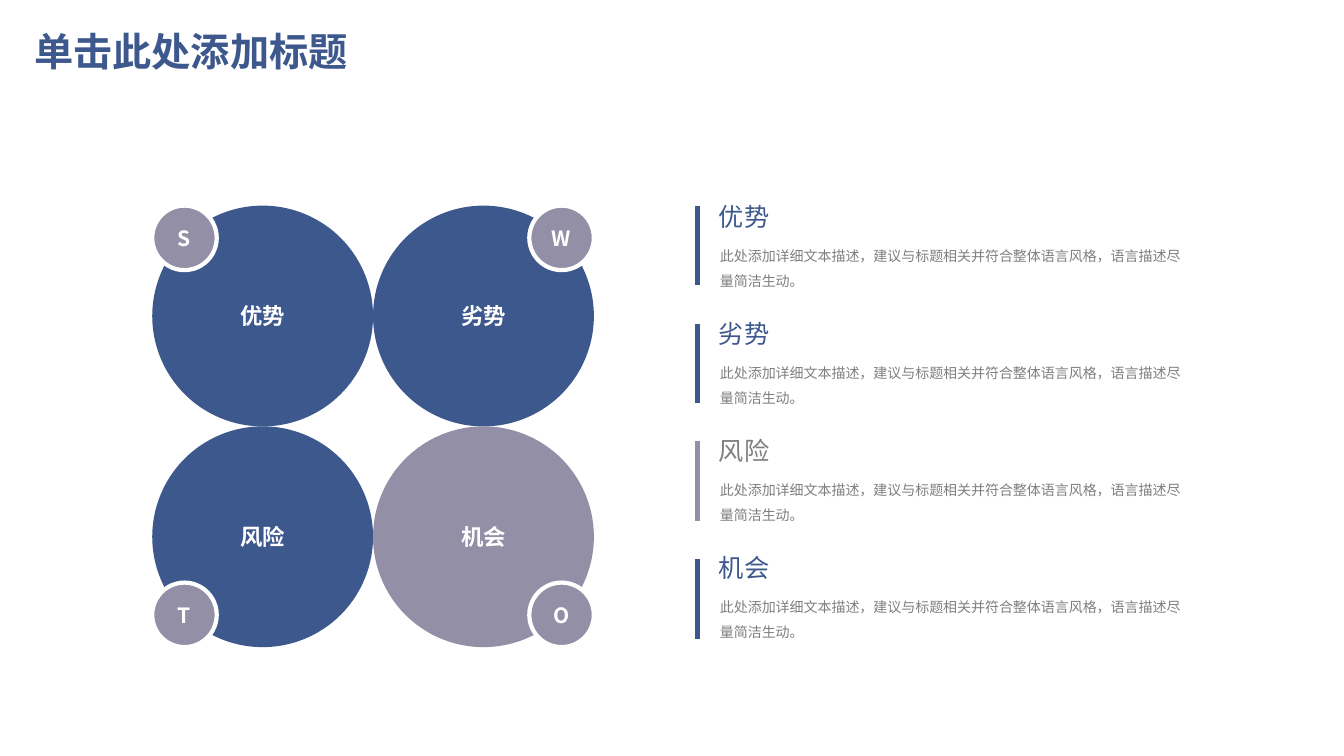
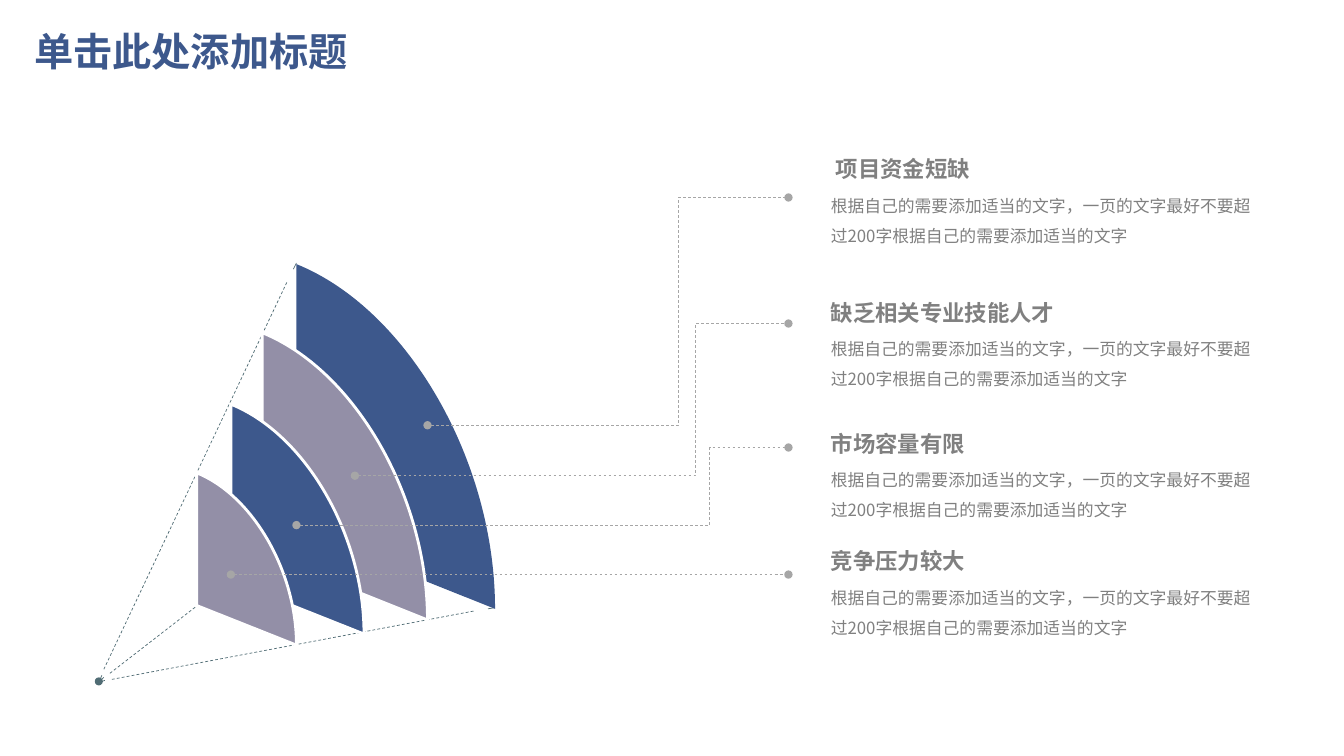
import lxml.etree
import pptx
import pptx.dml.color
import pptx.enum.dml
import pptx.enum.shapes
import pptx.enum.text
import pptx.oxml.ns
import pptx.util

Inches = pptx.util.Inches
Pt = pptx.util.Pt
SHAPES = pptx.enum.shapes.MSO_SHAPE
CONNECTORS = pptx.enum.shapes.MSO_CONNECTOR
ANCHOR = pptx.enum.text.MSO_ANCHOR
ALIGN = pptx.enum.text.PP_ALIGN
qn = pptx.oxml.ns.qn

BLUE, LAVENDER, WHITE = "3D588C", "938FA7", "FFFFFF"
TEXT_GREY, NOTE_GREY, LEADER_GREY, RAY_SLATE = "7F7F7F", "808080", "A6A6A6", "506C74"
TITLE = "单击此处添加标题"
CJK_FONT = "Noto Sans CJK SC"
SLIDE_WIDTH, SLIDE_HEIGHT, PANEL_TOP = 13.33, 7.5, 0.84

# Text styles: font attributes, line spacing
TITLE_STYLE = ({"name": "Montserrat", "size": Pt(28), "bold": True}, 0.9)
CIRCLE_STYLE = ({"name": CJK_FONT, "size": Pt(16), "bold": True}, 1.0)
BADGE_STYLE = ({"name": CJK_FONT, "size": Pt(15), "bold": True}, 1.0)
SWOT_HEADING = ({"name": CJK_FONT, "size": Pt(18)}, 0.9)
SWOT_BODY = ({"name": CJK_FONT, "size": Pt(10)}, 1.5)
RISK_HEADING = ({"name": CJK_FONT, "size": Pt(16), "bold": True}, 1.2)
RISK_BODY = ({"name": CJK_FONT, "size": Pt(12)}, 1.5)

# Name, badge letter, circle colour, bar colour, heading colour
SWOT = [
    ("优势", "S", BLUE, BLUE, BLUE),
    ("劣势", "W", BLUE, BLUE, BLUE),
    ("风险", "T", BLUE, LAVENDER, TEXT_GREY),
    ("机会", "O", LAVENDER, BLUE, BLUE),
]
SWOT_TEXT = "此处添加详细文本描述，建议与标题相关并符合整体语言风格，语言描述尽量简洁生动。"
CIRCLE_SIZE, BADGE_SIZE = 2.19, 0.64
GRID_LEFT, GRID_TOP = 1.51, 2.04

# Heading, indent, heading top, leader start, bend x, leader end y
RISKS = [
    ("项目资金短缺", 0.05, 1.42, (4.24, 4.22), 6.73, 1.96),
    ("缺乏相关专业技能人才", 0, 2.84, (3.52, 4.72), 6.9, 3.21),
    ("市场容量有限", 0, 4.14, (2.94, 5.21), 7.04, 4.44),
    ("竞争压力较大", 0, 5.31, (2.29, 5.7), None, 5.7),
]
RISK_TEXT = "根据自己的需要添加适当的文字，一页的文字最好不要超过200字根据自己的需要添加适当的文字"
LEADER_RIGHT = 7.82

# Left, top, width, height, colour, outline width
WEDGES = [
    (2.94, 2.62, 1.97, 3.42, BLUE, 0),
    (2.6, 3.3, 1.64, 2.85, LAVENDER, 2),
    (2.29, 4.01, 1.32, 2.28, BLUE, 2),
    (1.95, 4.69, 0.99, 1.71, LAVENDER, 2),
]
# Corner, top, two curve handles and tip, in fractions of the wedge's box
WEDGE_POINTS = [(0, 0.77), (0, 0), (0.56, 0.13), (1, 0.57), (1, 1)]

APEX = (0.98, 6.77)
# Points taken in pairs: stub, dashed stretch, tip
RAYS = [
    [APEX, (1.04, 6.75), (1.11, 6.74), (4.71, 6.06), (4.84, 6.04), (4.9, 6.03)],
    [APEX, (1.01, 6.7), (1.03, 6.64), (2.85, 2.79), (2.91, 2.67), (2.94, 2.61)],
    [APEX, (1.03, 6.72), (1.09, 6.68), (1.98, 5.99), (2.88, 5.29), (2.93, 5.25)],
]


def rgb(value):
    return pptx.dml.color.RGBColor.from_string(value)


def write(frame, text, style, color, align=ALIGN.LEFT, anchor=ANCHOR.TOP,
          insets=(0, 0, 0, 0)):
    """Put one formatted paragraph into a text frame."""
    left, top, right, bottom = (Inches(inset) for inset in insets)
    frame_format = {
        "word_wrap": True, "auto_size": pptx.enum.text.MSO_AUTO_SIZE.NONE,
        "vertical_anchor": anchor, "margin_left": left, "margin_top": top,
        "margin_right": right, "margin_bottom": bottom,
    }
    for name, value in frame_format.items():
        setattr(frame, name, value)
    font_format, spacing = style
    paragraph = frame.paragraphs[0]
    paragraph.alignment = align
    paragraph.line_spacing = spacing
    paragraph.space_before = Pt(0)
    run = paragraph.add_run()
    run.text = text
    for name, value in font_format.items():
        setattr(run.font, name, value)
    run.font.color.rgb = rgb(color)
    east_asian = lxml.etree.SubElement(run.font._element, qn("a:ea"))
    east_asian.set("typeface", CJK_FONT)


def add_text(slide, box, text, style, color, insets=(0, 0, 0, 0)):
    textbox = slide.shapes.add_textbox(*map(Inches, box))
    write(textbox.text_frame, text, style, color, insets=insets)


def paint(shape, fill, outline=0):
    """Give a shape a flat fill and an optional white outline."""
    shape.shadow.inherit = False
    shape.fill.solid()
    shape.fill.fore_color.rgb = rgb(fill)
    if outline:
        shape.line.color.rgb = rgb(WHITE)
        shape.line.width = Pt(outline)
    else:
        shape.line.fill.background()


def add_circle(slide, left, top, size, fill, outline=0):
    circle = slide.shapes.add_shape(
        SHAPES.OVAL, *map(Inches, (left, top, size, size)))
    paint(circle, fill, outline)
    return circle


def add_line(slide, start, end, color, width, dashed=False, bend=None, dots=False):
    """Draw a straight line, or an elbow that turns at x = bend."""
    kind = CONNECTORS.STRAIGHT if bend is None else CONNECTORS.ELBOW
    connector = slide.shapes.add_connector(kind, *map(Inches, (*start, *end)))
    connector.line.color.rgb = rgb(color)
    connector.line.width = Pt(width)
    if dashed:
        connector.line.dash_style = pptx.enum.dml.MSO_LINE.DASH
    properties = connector._element.spPr
    if dots:
        for name in ("a:headEnd", "a:tailEnd"):
            lxml.etree.SubElement(properties.find(qn("a:ln")), qn(name), type="oval")
    if bend is not None:
        ratio = round((bend - start[0]) / (end[0] - start[0]) * 100000)
        guides = properties.find(qn("a:prstGeom")).find(qn("a:avLst"))
        lxml.etree.SubElement(guides, qn("a:gd"), name="adj1", fmla=f"val {ratio}")
    lxml.etree.SubElement(properties, qn("a:effectLst"))


def add_wedge(slide, left, top, width, height, fill, outline):
    """Draw a wedge whose last three points form one Bezier curve."""
    corner, *others = [(Inches(left + x * width), Inches(top + y * height))
                       for x, y in WEDGE_POINTS]
    builder = slide.shapes.build_freeform(*corner)
    builder.add_line_segments(others, close=True)
    wedge = builder.convert_to_shape()
    segments = list(wedge._element.iter(qn("a:lnTo")))[1:4]
    curve = lxml.etree.Element(qn("a:cubicBezTo"))
    segments[0].addprevious(curve)
    for segment in segments:
        curve.append(segment[0])
        segment.getparent().remove(segment)
    paint(wedge, fill, outline)


def add_master_panel(presentation, slide):
    """Put the translucent white panel behind every slide."""
    box = (0, PANEL_TOP, SLIDE_WIDTH, SLIDE_HEIGHT - PANEL_TOP)
    panel = slide.shapes.add_shape(SHAPES.RECTANGLE, *map(Inches, box))
    paint(panel, WHITE)
    color = panel._element.spPr.find(qn("a:solidFill"))[0]
    lxml.etree.SubElement(color, qn("a:alpha"), val="72000")
    presentation.slide_master.shapes._spTree.insert(2, panel._element)


def add_slide(presentation):
    """Add a slide with the shared title."""
    slide = presentation.slides.add_slide(presentation.slide_layouts[5])
    title = slide.shapes.title
    position = {"left": 0.24, "top": 0.23, "width": 11.5, "height": 0.6}
    for name, value in position.items():
        setattr(title, name, Inches(value))
    write(title.text_frame, TITLE, TITLE_STYLE, BLUE, anchor=ANCHOR.MIDDLE,
          insets=(0.1, 0.05, 0.1, 0.05))
    return slide


def build_swot(presentation):
    slide = add_slide(presentation)
    add_master_panel(presentation, slide)
    badge_step = 2 * CIRCLE_SIZE - BADGE_SIZE
    layers = [(CIRCLE_SIZE, CIRCLE_SIZE, CIRCLE_STYLE, 0),
              (BADGE_SIZE, badge_step, BADGE_STYLE, 3)]
    for size, step, style, outline in layers:
        for index, (name, letter, circle_fill, _, _) in enumerate(SWOT):
            row, column = divmod(index, 2)
            is_badge = size == BADGE_SIZE
            circle = add_circle(
                slide, GRID_LEFT + column * step, GRID_TOP + row * step, size,
                LAVENDER if is_badge else circle_fill, outline)
            write(circle.text_frame, letter if is_badge else name, style, WHITE,
                  ALIGN.CENTER, ANCHOR.MIDDLE)
    for index, (name, _, _, bar_color, heading_color) in enumerate(SWOT):
        text_top = GRID_TOP + 1.16 * index
        bar_top = GRID_TOP + 1.17 * index
        add_line(slide, (6.92, bar_top), (6.92, bar_top + 0.79), bar_color, 4)
        add_text(slide, (7.13, text_top - 0.01, 4.69, 0.33), name, SWOT_HEADING,
                 heading_color)
        add_text(slide, (7.14, text_top + 0.33, 4.68, 0.56), SWOT_TEXT, SWOT_BODY,
                 TEXT_GREY)


def build_risks(presentation):
    slide = add_slide(presentation)
    for points in RAYS:
        for index, (start, end) in enumerate(zip(points[::2], points[1::2])):
            add_line(slide, start, end, RAY_SLATE, 0.5, dashed=index == 1)
    for wedge in WEDGES:
        add_wedge(slide, *wedge)
    add_circle(slide, 0.94, 6.72, 0.08, RAY_SLATE)
    for heading, indent, top, start, bend, end_y in RISKS:
        add_line(slide, start, (LEADER_RIGHT, end_y), LEADER_GREY, 0.5,
                 dashed=True, bend=bend, dots=True)
        add_text(slide, (8.11, top, 4.45, 0.46), heading, RISK_HEADING, NOTE_GREY,
                 (0.13 + indent, 0.07, 0.13, 0.07))
        add_text(slide, (8.11, top + 0.35, 4.45, 0.65), RISK_TEXT, RISK_BODY, NOTE_GREY,
                 (0.13, 0.07, 0.13, 0.07))


def main():
    presentation = pptx.Presentation()
    presentation.slide_width = Inches(SLIDE_WIDTH)
    presentation.slide_height = Inches(SLIDE_HEIGHT)
    build_swot(presentation)
    build_risks(presentation)
    presentation.save("out.pptx")


if __name__ == "__main__":
    main()
